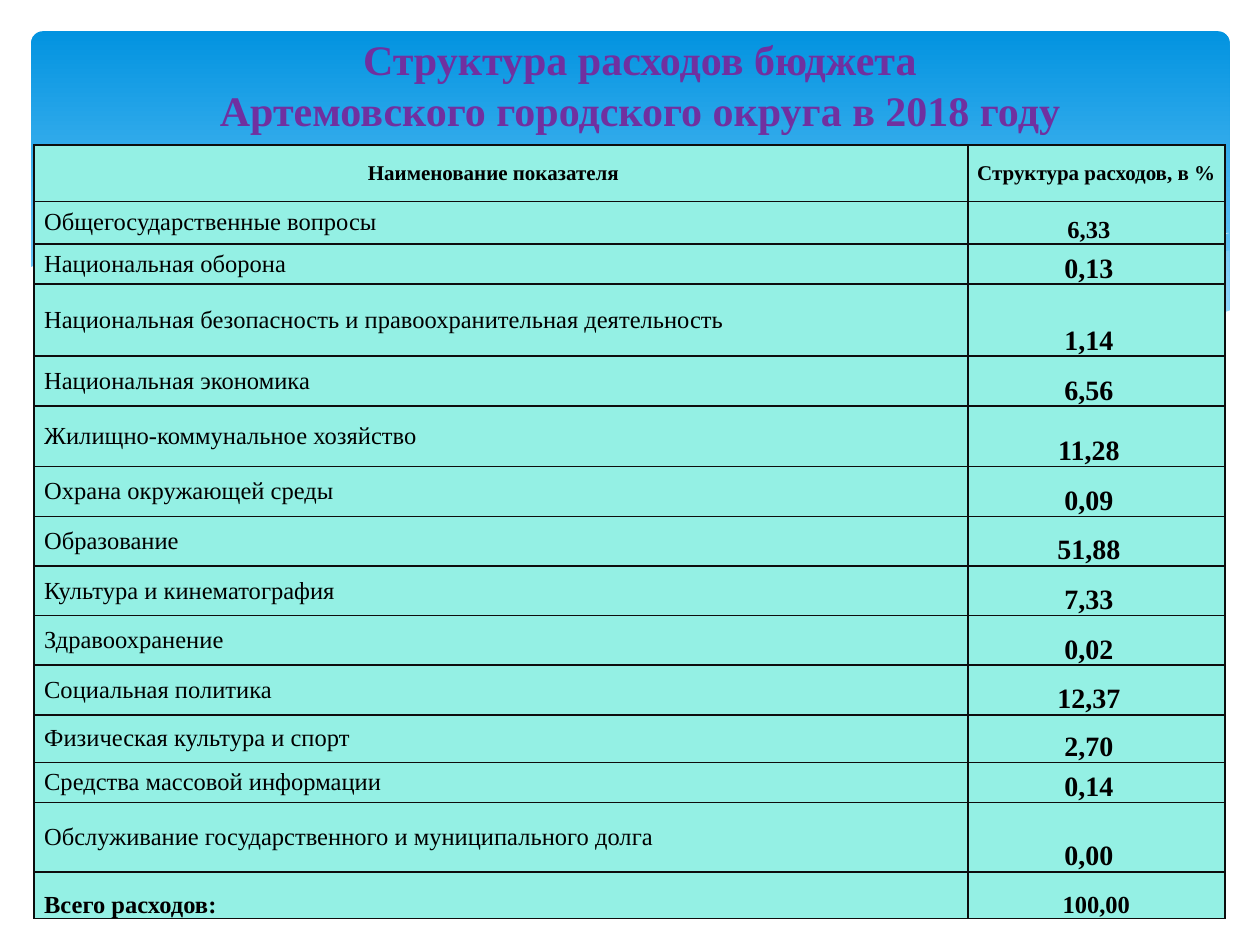
from lxml.etree import SubElement
from pptx import Presentation
from pptx.dml.color import RGBColor
from pptx.enum.shapes import MSO_SHAPE
from pptx.enum.text import MSO_ANCHOR, PP_ALIGN
from pptx.oxml import parse_xml
from pptx.oxml.ns import nsdecls, qn
from pptx.util import Cm, Pt


def color(hex_code):
    return RGBColor.from_string(hex_code)


def format_text(text_frame, size, bold, hex_code, align):
    for paragraph in text_frame.paragraphs:
        paragraph.alignment = align
        for run in paragraph.runs:
            run.font.name = "Times New Roman"
            run.font.size = Pt(size)
            run.font.bold = bold
            run.font.color.rgb = color(hex_code)


prs = Presentation()
prs.slide_width = Cm(25.4)
prs.slide_height = Cm(19.05)
slide = prs.slides.add_slide(prs.slide_layouts[6])

banner = slide.shapes.add_shape(
    MSO_SHAPE.ROUNDED_RECTANGLE, Cm(0.63), Cm(0.63), Cm(24.16), Cm(6.86))
banner.adjustments[0] = 0.034
banner.shadow.inherit = False
banner.fill.gradient()
banner.fill.gradient_angle = 270
for stop, (position, hex_code) in zip(
        banner.fill.gradient_stops, [(0, "0293E0"), (0.9, "83D3FE")]):
    stop.position = position
    stop.color.rgb = color(hex_code)
banner.line.fill.background()

pale_wave = [(2477, 505), (2334, 538), (2187, 566), (1979, 615), (1793, 653),
             (1679, 673), (1859, 696), (2012, 704), (2144, 701), (2258, 691),
             (2357, 673), (2446, 640), (2479, 627), (2479, 505)]
crest_line = [(1557, 653), (1656, 625), (1765, 597), (1900, 566),
              (2047, 533), (2200, 505), (2347, 483), (2477, 470)]
white_wave = [(2482, 625), (2388, 658), (2283, 683), (2159, 699), (2014, 704),
              (1844, 691), (1644, 665), (1410, 622), (1135, 559), (927, 513),
              (742, 485), (584, 470), (450, 467), (335, 472), (241, 485),
              (170, 500), (117, 516), (74, 533), (58, 541), (58, 836), (2482, 836)]

for points, fill_color, opacity, line_color in [
        (pale_wave, "C6E7FC", 29, None),
        (crest_line, None, 100, "FFFFFF"),
        (white_wave, "FFFFFF", 100, None)]:
    outline = slide.shapes.build_freeform(*points[0], scale=Cm(0.01))
    outline.add_line_segments(points[1:], close=fill_color is not None)
    wave = outline.convert_to_shape()
    wave.shadow.inherit = False
    if fill_color:
        wave.fill.solid()
        wave.fill.fore_color.rgb = color(fill_color)
        wave.line.fill.background()
    else:
        wave.fill.background()
        wave.line.color.rgb = color(line_color)
        wave.line.width = Pt(0.25)
    if opacity < 100:
        tint = wave.fill._xPr.find(qn("a:solidFill"))[0]
        SubElement(tint, qn("a:alpha")).set("val", str(opacity * 1000))

title = slide.shapes.add_textbox(Cm(1.09), Cm(0.71), Cm(23.62), Cm(1.98)).text_frame
title.word_wrap = True
title.vertical_anchor = MSO_ANCHOR.MIDDLE
title.text = "Структура расходов бюджета\vАртемовского городского округа в 2018 году"
format_text(title, 24, True, "7030A0", PP_ALIGN.CENTER)

expenses = [
    ("Наименование показателя", "Структура расходов, в %", 1.14),
    ("Общегосударственные вопросы", "6,33", 0.86),
    ("Национальная оборона", "0,13", 0.81),
    ("Национальная безопасность и правоохранительная деятельность", "1,14", 1.45),
    ("Национальная экономика", "6,56", 1.01),
    ("Жилищно-коммунальное хозяйство", "11,28", 1.21),
    ("Охрана окружающей среды", "0,09", 1.01),
    ("Образование", "51,88", 1),
    ("Культура и кинематография", "7,33", 1),
    ("Здравоохранение", "0,02", 1),
    ("Социальная политика", "12,37", 1),
    ("Физическая культура и спорт", "2,70", 0.96),
    ("Средства массовой информации", "0,14", 0.81),
    ("Обслуживание государственного и муниципального долга", "0,00", 1.4),
    ("Всего расходов:", "100,00", 0.94),
]
last = len(expenses) - 1
budget = slide.shapes.add_table(
    len(expenses), 2, Cm(0.69), Cm(2.92), Cm(24), Cm(15.6)).table
budget.first_row = False
budget.horz_banding = False
budget.columns[0].width = Cm(18.82)
budget.columns[1].width = Cm(5.18)

for row, (name, share, height) in enumerate(expenses):
    budget.rows[row].height = Cm(height)
    header, total = row == 0, row == last
    for column, text in enumerate((name, share)):
        cell = budget.cell(row, column)
        is_name = column == 0
        cell.text_frame.text = text
        size = 12 if header else 14 if is_name or row == 1 or total else 16
        centered = header or not is_name
        format_text(cell.text_frame, size, centered or total, "000000",
                    PP_ALIGN.CENTER if centered else PP_ALIGN.LEFT)
        cell.vertical_anchor = (
            MSO_ANCHOR.MIDDLE if header or (is_name and not total) else MSO_ANCHOR.BOTTOM)
        cell.margin_left = Cm(0.2 if is_name and not header else 0)
        shifted = centered and not total and not (header and not is_name)
        cell.margin_right = Cm(0.3 if shifted else 0)
        cell.margin_top = cell.margin_bottom = 0
        cell.fill.solid()
        cell.fill.fore_color.rgb = color("94F0E4")
        properties = cell._tc.get_or_add_tcPr()
        for index, side in enumerate(("lnL", "lnR", "lnT", "lnB")):
            properties.insert(index, parse_xml(
                f'<a:{side} {nsdecls("a")} w="{Pt(1)}"><a:solidFill>'
                f'<a:srgbClr val="0D0D0D"/></a:solidFill></a:{side}>'))

prs.save("out.pptx")
